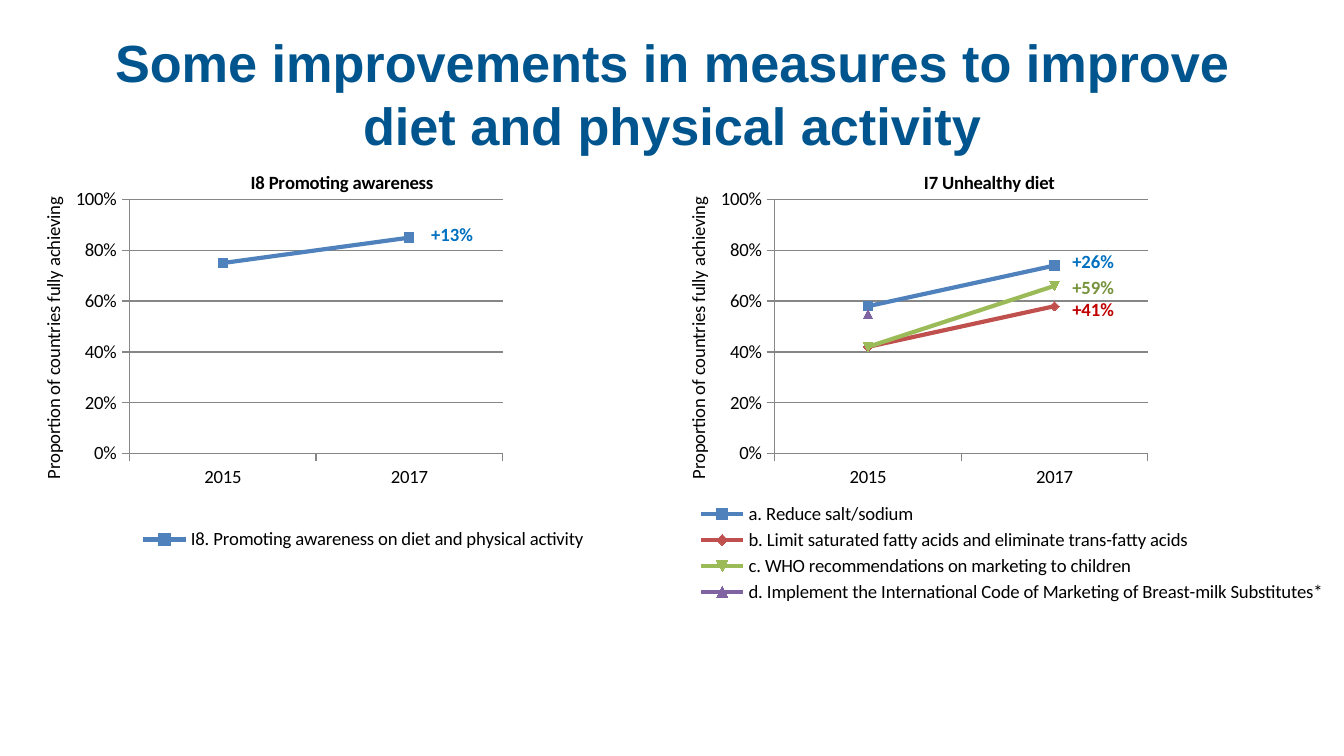
from dataclasses import dataclass
from lxml.etree import SubElement
from pptx import Presentation
from pptx.chart.data import CategoryChartData
from pptx.dml.color import RGBColor
from pptx.enum.chart import XL_CHART_TYPE, XL_LEGEND_POSITION, XL_TICK_MARK
from pptx.enum.text import MSO_ANCHOR, MSO_AUTO_SIZE, PP_ALIGN
from pptx.oxml.ns import qn
from pptx.util import Emu, Pt

SCALE = 4572  # EMU in one px, 200 px to the inch
WIDE, HIGH = 976, 742  # chart size
PLOT = (137, 79, 555, 378)  # plot area inside a chart
BLACK, GRAY = "000000", "868686"
BLUE, RED, GREEN, PURPLE = "4F81BD", "C0504D", "9BBB59", "8064A2"
YEARS = ("2015", "2017")


@dataclass
class Line:
    name: str
    vals: tuple
    color: str


@dataclass
class Panel:
    left: int
    title: str
    head: tuple  # title place inside the chart
    key: tuple  # legend place and size inside the chart
    lines: list


@dataclass
class Label:
    text: str
    left: int
    top: int
    color: str


PANELS = [
    Panel(1016, "I7 Unhealthy diet", (354, 30), (16, 524, 947, 162), [
        Line("a. Reduce salt/sodium", (0.58, 0.74), BLUE),
        Line("b. Limit saturated fatty acids and eliminate trans-fatty acids", (0.42, 0.58), RED),
        Line("c. WHO recommendations on marketing to children", (0.42, 0.66), GREEN),
        Line("d. Implement the International Code of Marketing of Breast-milk Substitutes*",
             (0.55, None), PURPLE),
    ]),
    Panel(56, "I8 Promoting awareness", (312, 31), (143, 559, 683, 52), [
        Line("I8. Promoting awareness on diet and physical activity", (0.75, 0.85), BLUE),
    ]),
]
LABELS = [
    Label("+41%", 1576, 434, "C00000"),
    Label("+59%", 1576, 401, "77933C"),
    Label("+26%", 1576, 362, "0070C0"),
    Label("+13%", 622, 322, "0070C0"),
]


def px(n: int) -> Emu:
    return Emu(n * SCALE)


def rgb(code: str) -> RGBColor:
    return RGBColor.from_string(code)


def style(font, color: str = BLACK, size: int = 10, bold: bool = False, name: str = "Calibri") -> None:
    for key, val in {"name": name, "size": Pt(size), "bold": bold}.items():
        setattr(font, key, val)
    font.color.rgb = rgb(color)


def place(node, index: int, spots: tuple, inner: bool = False) -> None:
    """Give a chart part a fixed place: x, y and, if given, width and height."""
    for old in node.findall(qn("c:layout")):
        node.remove(old)
    box = SubElement(node, qn("c:layout"))
    node.insert(index, box)
    manual = SubElement(box, qn("c:manualLayout"))
    rules = {"layoutTarget": "inner"} if inner else {}
    rules |= {"xMode": "edge", "yMode": "edge"}
    for tag, spot, full in zip("xywh", spots, (WIDE, HIGH) * 2):
        rules[tag] = spot / full
    for tag, val in rules.items():
        SubElement(manual, qn("c:" + tag)).set("val", str(val))


def write(title, text: str, spots: tuple, bold: bool) -> None:
    """Fill a chart or axis title."""
    para = title.text_frame.paragraphs[0]
    run = para.add_run()
    run.text = text
    style(run.font, bold=bold)
    place(title._element, 1, spots)
    title._element.find(qn("c:overlay")).set("val", "1")


def draw_axes(chart) -> None:
    for axis in (chart.category_axis, chart.value_axis):
        axis.major_tick_mark = XL_TICK_MARK.OUTSIDE
        axis.format.line.color.rgb = rgb(GRAY)
        style(axis.tick_labels.font)
    scale = chart.value_axis
    rules = {"minimum_scale": 0, "maximum_scale": 1, "major_unit": 0.2, "has_major_gridlines": True}
    for key, val in rules.items():
        setattr(scale, key, val)
    scale.major_gridlines.format.line.color.rgb = rgb(GRAY)
    scale.tick_labels.number_format = "0%"
    scale.tick_labels.number_format_is_linked = False
    write(scale.axis_title, "Proportion of countries fully achieving", (0, 70), False)
    body = scale.axis_title._element.find(".//" + qn("a:bodyPr"))
    for key, val in {"rot": "-5400000", "vert": "horz"}.items():
        body.set(key, val)


def draw_panel(slide, panel: Panel) -> None:
    data = CategoryChartData(number_format="0%")
    data.categories = YEARS
    for line in panel.lines:
        data.add_series(line.name, line.vals)
    frame = slide.shapes.add_chart(XL_CHART_TYPE.LINE_MARKERS, px(panel.left), px(218),
                                   px(WIDE), px(HIGH), data)
    chart = frame.chart
    style(chart.font, size=18)
    write(chart.chart_title, panel.title, panel.head, True)
    draw_axes(chart)
    plot = chart.plots[0]
    plot.vary_by_categories = False
    place(chart._chartSpace.chart.plotArea, 0, PLOT, True)
    # Series lines and markers
    for line, item in zip(panel.lines, plot.series):
        item.smooth = False
        item.format.line.width = Pt(2.25)
        item.format.line.color.rgb = rgb(line.color)
        item.marker.size = 5
        item.marker.format.fill.solid()
        item.marker.format.fill.fore_color.rgb = rgb(line.color)
        item.marker.format.line.color.rgb = rgb(line.color)
    # Legend
    chart.has_legend = True
    key = chart.legend
    key.position = XL_LEGEND_POSITION.BOTTOM
    key.include_in_layout = False
    style(key.font)
    place(key._element, 1, panel.key)


def draw_label(slide, label: Label) -> None:
    box = slide.shapes.add_textbox(px(label.left), px(label.top), px(104), px(54))
    frame = box.text_frame
    frame.word_wrap = False
    frame.auto_size = MSO_AUTO_SIZE.SHAPE_TO_FIT_TEXT
    run = frame.paragraphs[0].add_run()
    run.text = label.text
    style(run.font, label.color, bold=True)


def draw_title(slide, text: str) -> None:
    title = slide.shapes.title
    spots = {"left": 100, "top": 45, "width": 1800, "height": 188}
    for key, val in spots.items():
        setattr(title, key, px(val))
    frame = title.text_frame
    frame.word_wrap = True
    frame.auto_size = MSO_AUTO_SIZE.NONE
    frame.vertical_anchor = MSO_ANCHOR.MIDDLE
    para = frame.paragraphs[0]
    para.alignment = PP_ALIGN.CENTER
    run = para.add_run()
    run.text = text
    style(run.font, "00558E", 28, True, "Arial")


def main() -> None:
    deck = Presentation()
    deck.slide_width, deck.slide_height = px(2000), px(1125)
    slide = deck.slides.add_slide(deck.slide_layouts[5])
    draw_title(slide, "Some improvements in measures to improve diet and physical activity")
    for panel in PANELS:
        draw_panel(slide, panel)
    for label in LABELS:
        draw_label(slide, label)
    deck.save("out.pptx")


if __name__ == "__main__":
    main()
